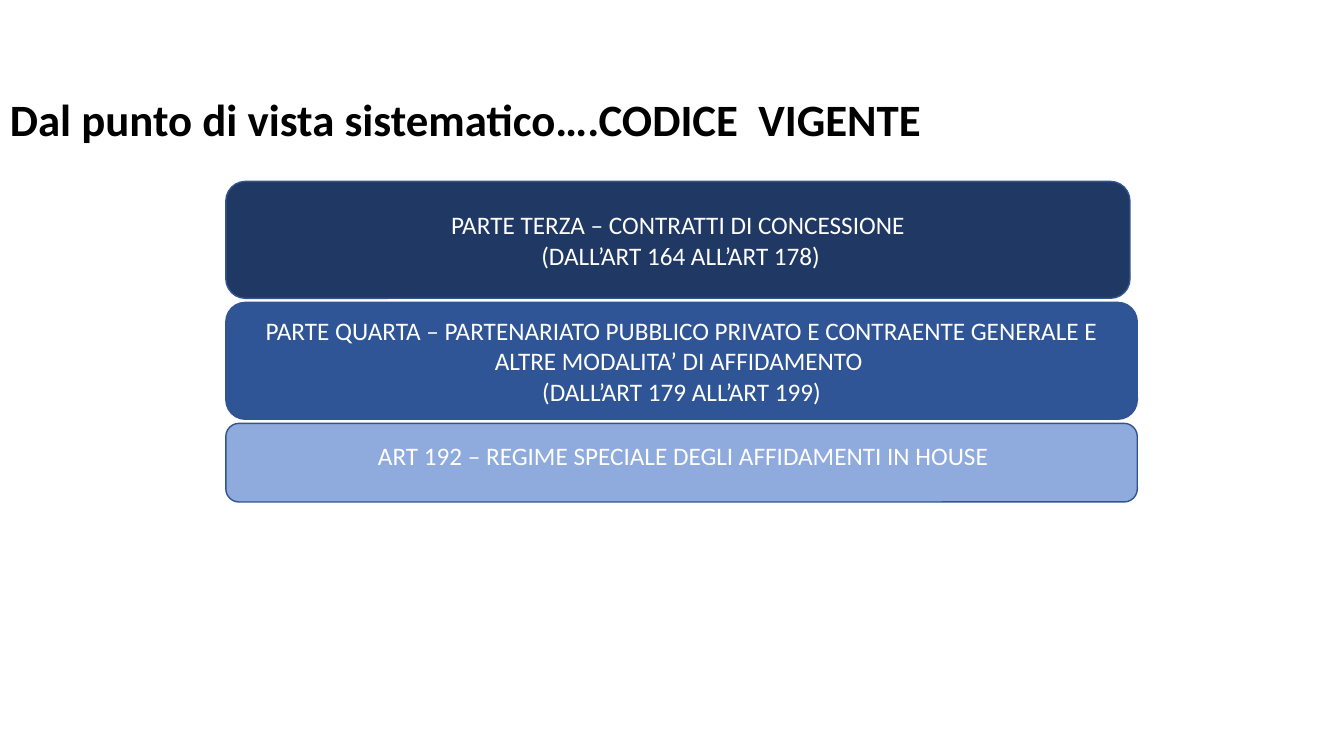
import pptx
import pptx.util
import pptx.dml.color
import pptx.enum.shapes
import pptx.enum.text
from dataclasses import dataclass

Inches = pptx.util.Inches
RGB = pptx.dml.color.RGBColor.from_string
ALIGN = pptx.enum.text.PP_ALIGN
ANCHOR = pptx.enum.text.MSO_ANCHOR


@dataclass(frozen=True)
class Theme:
    font: str = "Calibri"
    title_size: int = 32
    body_size: int = 18
    title: str = "000000"
    label: str = "FFFFFF"
    outline: str = "325491"
    part_three: str = "203864"
    part_four: str = "2F5597"
    in_house: str = "8FAADC"


THEME = Theme()
SLIDE_W, SLIDE_H = 13.33, 7.5
GAP = 0.04

# Fill, width share, height and lines of each bar
BARS = [
    (THEME.part_three, 0.992, 1.16,
     ["PARTE TERZA – CONTRATTI DI CONCESSIONE", " (DALL’ART 164 ALL’ART 178)"]),
    (THEME.part_four, 1, 1.16,
     ["PARTE QUARTA – PARTENARIATO PUBBLICO PRIVATO E CONTRAENTE GENERALE E "
      "ALTRE MODALITA’ DI AFFIDAMENTO ", "(DALL’ART 179 ALL’ART 199)"]),
    (THEME.in_house, 1, 0.78, []),
]
IN_HOUSE_LABEL = "ART 192 – REGIME SPECIALE DEGLI AFFIDAMENTI IN HOUSE"


def write(tf, lines, size=THEME.body_size, color=THEME.label, bold=False,
          align=ALIGN.LEFT, anchor=ANCHOR.TOP):
    tf.word_wrap = True
    tf.vertical_anchor = anchor
    for i, line in enumerate(lines):
        p = tf.paragraphs[0] if i == 0 else tf.add_paragraph()
        p.alignment = align
        r = p.add_run()
        r.text = line
        r.font.name, r.font.size = THEME.font, pptx.util.Pt(size)
        r.font.bold, r.font.color.rgb = bold, RGB(color)


def add_label(s, box, text, **fmt):
    sp = s.shapes.add_textbox(*map(Inches, box))
    write(sp.text_frame, [text], **fmt)


def add_bar(s, box, fill, lines):
    sp = s.shapes.add_shape(pptx.enum.shapes.MSO_SHAPE.ROUNDED_RECTANGLE,
                            *map(Inches, box))
    sp.shadow.inherit = False
    sp.fill.solid()
    sp.fill.fore_color.rgb = RGB(fill)
    sp.line.color.rgb = RGB(THEME.outline)
    sp.line.width = pptx.util.Pt(1)
    write(sp.text_frame, lines, align=ALIGN.CENTER, anchor=ANCHOR.MIDDLE)


def add_bar_stack(s, left, top, width):
    """Stack the bars downwards; the last one carries a separate label."""
    y = top
    for fill, share, height, lines in BARS:
        add_bar(s, (left, y, width * share, height), fill, lines)
        last_top = y
        y += height + GAP
    add_label(s, (left + 1.41, last_top + 0.12, 7.75, 0.4), IN_HOUSE_LABEL)


def main():
    prs = pptx.Presentation()
    prs.slide_width, prs.slide_height = Inches(SLIDE_W), Inches(SLIDE_H)
    s = prs.slides.add_slide(prs.slide_layouts[6])

    # Title
    add_label(s, (0, 0.86, SLIDE_W, 0.64),
              "Dal punto di vista sistematico….CODICE  VIGENTE",
              size=THEME.title_size, color=THEME.title, bold=True)

    # Parts of the code
    add_bar_stack(s, left=2.24, top=0.24 * SLIDE_H, width=9.04)

    prs.save("out.pptx")


if __name__ == "__main__":
    main()
